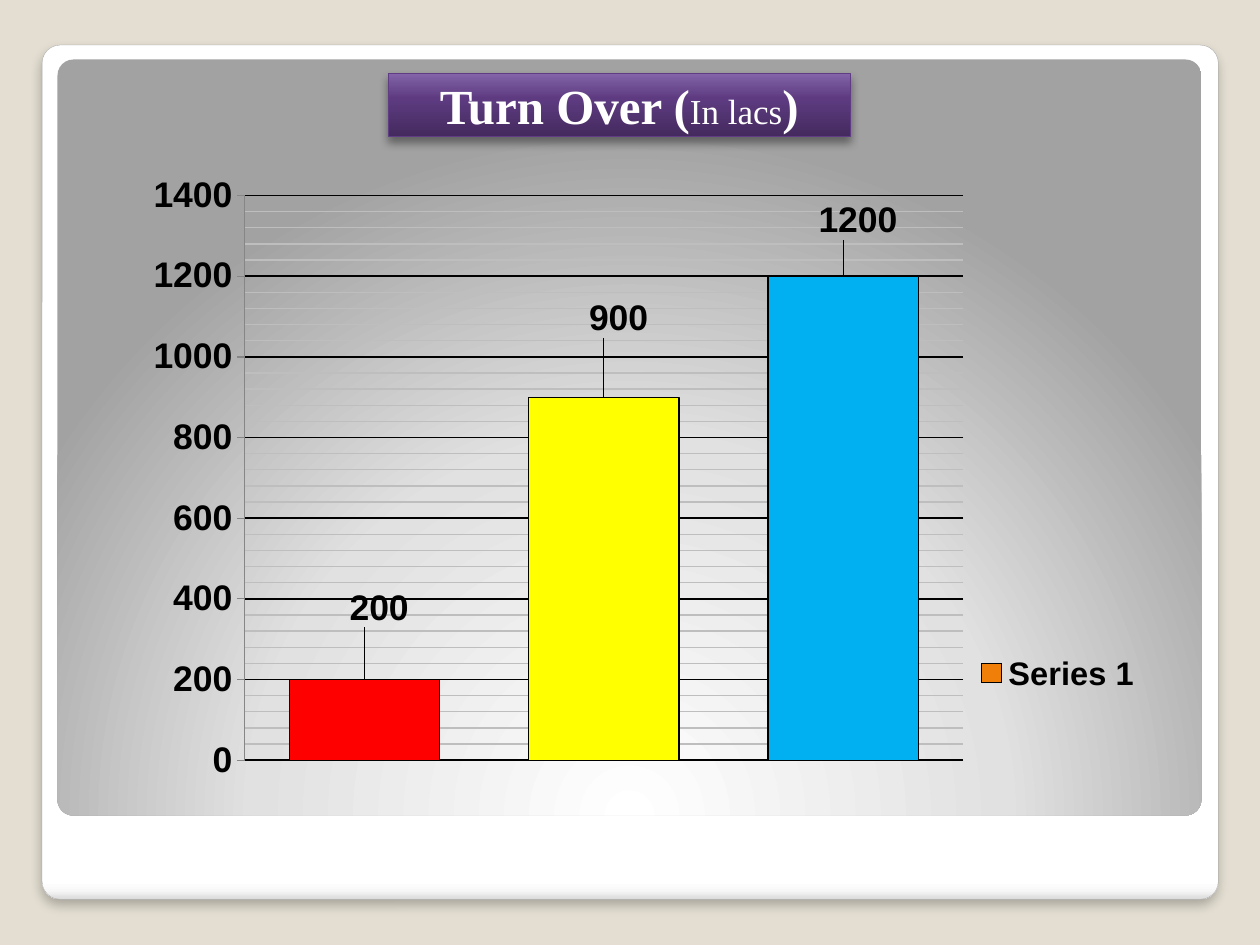
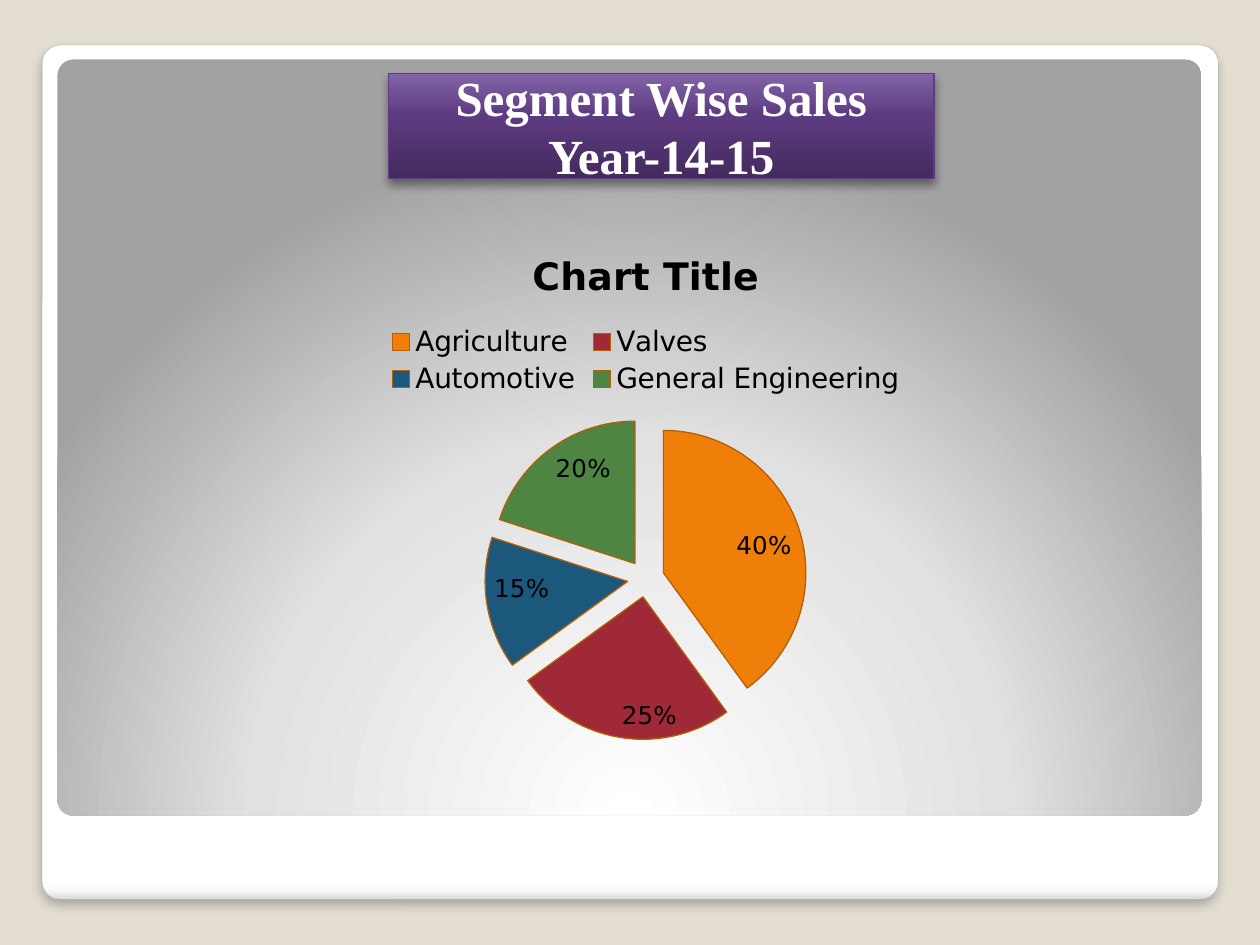
"""Builds two sales slides, a turnover column chart and a segment pie chart."""
from pptx import Presentation, util as u
from pptx.chart import data
from pptx.dml import color
from pptx.enum import chart as ch, shapes, text
from pptx.oxml import parse_xml, ns

BACKDROP, BLACK, WHITE = "E3DED1", "000000", "FFFFFF"
SERIES = "Series 1"

CARD = {
    "box": (0.85, 0.91, 23.71, 17.22),
    "stops": [(0, WHITE), (98, WHITE), (99, "F7F7F7"), (100, "DADADA")],
    "direction": '<a:lin ang="5400000" scaled="0"/>',
    "line": ("A4A4A4", 0.16), "shadow": (25, 6, 4), "round": 0.021,
}
PANEL = {
    "box": (1.16, 1.2, 23.06, 15.24),
    "stops": [(0, WHITE), (55, "E1E1E1"), (100, "A2A2A2")],
    "direction": '<a:path path="circle"><a:fillToRect l="50000" t="175000" '
                 'r="50000" b="-75000"/></a:path>',
    "round": 0.021,
}
BANNER = {
    "stops": [(0, "442A5E"), (60, "5E3B81"), (100, "8364A8")],
    "direction": '<a:lin ang="16200000" scaled="0"/>',
    "line": ("603C84", 0.75), "shadow": (40, 5.2, 3),
}
BANNER_CORNER = (7.83, 1.48)

TURNOVER = {
    "title": [("Turn Over (", 28, True), ("In lacs", 20, False), (")", 28, True)],
    "banner": (9.31, 1.27),
    "box": (2.33, 3.18, 21.17, 12.91),
    "bars": [("1", 200, "FF0000", (0.014, -0.073)),
             ("2", 900, "FFFF00", (0.014, -0.084)),
             ("3", 1200, "00B0F0", (0.014, -0.048))],
    "plot": (0.123, 0.059, 0.684, 0.882),
    "legend": (0.815, 0.775, 0.165, 0.06),
}
SEGMENTS = {
    "title": [("Segment Wise Sales Year-14-15", 28, True)],
    "banner": (11, 2.12),
    "box": (6.14, 4.57, 13.76, 10.69),
    "heading": "Chart Title",
    "slices": [("Agriculture", 40, "F07F09"), ("Valves", 25, "9F2936"),
               ("Automotive", 15, "1B587C"), ("General Engineering", 20, "4E8542")],
    "explosion": 13,
}


def rgb(value):
    return color.RGBColor.from_string(value)


def apply(target, **values):
    for name, value in values.items():
        setattr(target, name, value)


def style_font(font, size, face, shade=BLACK, bold=False):
    apply(font, size=u.Pt(size), name=face, bold=bold)
    font.color.rgb = rgb(shade)


def stroke(line, shade, width):
    line.color.rgb = rgb(shade)
    line.width = u.Pt(width)


def paint(part, shade, outline):
    part.format.fill.solid()
    part.format.fill.fore_color.rgb = rgb(shade)
    stroke(part.format.line, outline, 0.75)


def layout(values, inner=False):
    names = "xywh"[:len(values)]
    modes = names if len(values) == 4 else ""
    target = '<c:layoutTarget val="inner"/>' if inner else ""
    target += "".join(f'<c:{n}Mode val="edge"/>' for n in modes if n in "xy")
    sizes = "".join(f'<c:{n} val="{v}"/>' for n, v in zip(names, values))
    return parse_xml(f'<c:layout {ns.nsdecls("c")}><c:manualLayout>{target}{sizes}'
                     '</c:manualLayout></c:layout>')


def add_plate(slide, box, look):
    kind = "ROUNDED_RECTANGLE" if "round" in look else "RECTANGLE"
    plate = slide.shapes.add_shape(getattr(shapes.MSO_SHAPE, kind), *map(u.Cm, box))
    if "round" in look:
        plate.adjustments[0] = look["round"]
    if "line" in look:
        stroke(plate.line, *look["line"])
    else:
        plate.line.fill.background()
    stops = "".join(f'<a:gs pos="{pos * 1000}"><a:srgbClr val="{shade}"/></a:gs>'
                    for pos, shade in look["stops"])
    plate.fill.solid()
    solid = plate._element.spPr.find(ns.qn("a:solidFill"))
    solid.getparent().replace(solid, parse_xml(
        f'<a:gradFill {ns.nsdecls("a")} rotWithShape="1"><a:gsLst>{stops}</a:gsLst>'
        f'{look["direction"]}</a:gradFill>'))
    plate.shadow.inherit = False
    if "shadow" in look:
        alpha, blur, distance = look["shadow"]
        plate._element.spPr.find(ns.qn("a:effectLst")).append(parse_xml(
            f'<a:outerShdw {ns.nsdecls("a")} blurRad="{u.Pt(blur)}" dist="{u.Pt(distance)}" '
            f'dir="5400000" rotWithShape="0"><a:srgbClr val="{BLACK}">'
            f'<a:alpha val="{alpha * 1000}"/></a:srgbClr></a:outerShdw>'))
    return plate


def start_slide(deck, content):
    slide = deck.slides.add_slide(deck.slide_layouts[6])
    slide.background.fill.solid()
    slide.background.fill.fore_color.rgb = rgb(BACKDROP)
    for look in (CARD, PANEL):
        add_plate(slide, look["box"], look)
    frame = add_plate(slide, BANNER_CORNER + content["banner"], BANNER).text_frame
    apply(frame, word_wrap=True, vertical_anchor=text.MSO_ANCHOR.MIDDLE)
    title = frame.paragraphs[0]
    title.alignment = text.PP_ALIGN.CENTER
    for words, size, bold in content["title"]:
        run = title.add_run()
        run.text = words
        style_font(run.font, size, "Times New Roman", WHITE, bold)
    return slide


def add_series_chart(slide, kind, box, rows):
    table = data.CategoryChartData(number_format="0")
    table.categories = [row[0] for row in rows]
    table.add_series(SERIES, [row[1] for row in rows])
    chart = slide.shapes.add_chart(kind, *map(u.Cm, box), table).chart
    chart.has_legend = True
    chart.legend.include_in_layout = False
    return chart, chart.plots[0], chart.plots[0].series[0]


def add_turnover(slide, content):
    bars = content["bars"]
    chart, plot, series = add_series_chart(
        slide, ch.XL_CHART_TYPE.COLUMN_CLUSTERED, content["box"], bars)
    chart.has_title = False
    style_font(chart.font, 16.6, "Calibri")
    apply(plot, gap_width=59, vary_by_categories=False)
    paint(series, "F07F09", BLACK)
    for index, (_, _, shade, shift) in enumerate(bars):
        point = series.points[index]
        paint(point, shade, BLACK)
        label = point.data_label
        style_font(label.font, 20.3, "Arial", bold=True)
        label.position = ch.XL_LABEL_POSITION.OUTSIDE_END
        entry = series._element.findall(".//" + ns.qn("c:dLbl"))[index]
        entry.find(ns.qn("c:idx")).addnext(layout(shift))

    chart.category_axis.visible = False
    axis = chart.value_axis
    apply(axis, minimum_scale=0, maximum_scale=1400, major_unit=200, minor_unit=40,
          has_major_gridlines=True, has_minor_gridlines=True,
          major_tick_mark=ch.XL_TICK_MARK.OUTSIDE)
    style_font(axis.tick_labels.font, 20.3, "Arial", bold=True)
    stroke(axis.format.line, "868686", 0.75)
    stroke(axis.major_gridlines.format.line, BLACK, 0.92)
    axis._element.find(ns.qn("c:minorGridlines")).append(parse_xml(
        f'<c:spPr {ns.nsdecls("c", "a")}><a:ln w="{u.Pt(0.75)}"><a:solidFill>'
        '<a:srgbClr val="BEBEBE"/></a:solidFill></a:ln></c:spPr>'))

    chart.legend.position = ch.XL_LEGEND_POSITION.RIGHT
    style_font(chart.legend.font, 18.6, "Arial", bold=True)
    chart.legend._element.find(ns.qn("c:legendPos")).addnext(layout(content["legend"]))
    area = plot._element.getparent()
    for automatic in area.findall(ns.qn("c:layout")):
        area.remove(automatic)
    area.insert(0, layout(content["plot"], inner=True))


def add_segments(slide, content):
    slices = content["slices"]
    chart, plot, series = add_series_chart(
        slide, ch.XL_CHART_TYPE.PIE, content["box"], slices)
    style_font(chart.font, 18, "DejaVu Sans")
    chart.has_title = True
    heading = chart.chart_title.text_frame
    heading.text = content["heading"]
    style_font(heading.paragraphs[0].runs[0].font, 21.6, "DejaVu Sans", bold=True)
    chart.legend.position = ch.XL_LEGEND_POSITION.TOP
    style_font(chart.legend.font, 16, "DejaVu Sans")
    plot.vary_by_categories = True
    paint(series, slices[0][2], "B45F06")
    series._element.find(ns.qn("c:spPr")).addnext(parse_xml(
        f'<c:explosion {ns.nsdecls("c")} val="{content["explosion"]}"/>'))
    for index, (_, _, shade) in enumerate(slices):
        paint(series.points[index], shade, "B45F06")
    plot.has_data_labels = True
    apply(plot.data_labels, show_percentage=True, show_value=False, number_format="0%",
          number_format_is_linked=False, position=ch.XL_LABEL_POSITION.INSIDE_END)
    style_font(plot.data_labels.font, 14, "DejaVu Sans")


def main():
    deck = Presentation()
    apply(deck, slide_width=u.Cm(25.4), slide_height=u.Cm(19.05))
    for content, add_content in ((TURNOVER, add_turnover), (SEGMENTS, add_segments)):
        add_content(start_slide(deck, content), content)
    deck.save("out.pptx")


if __name__ == "__main__":
    main()
